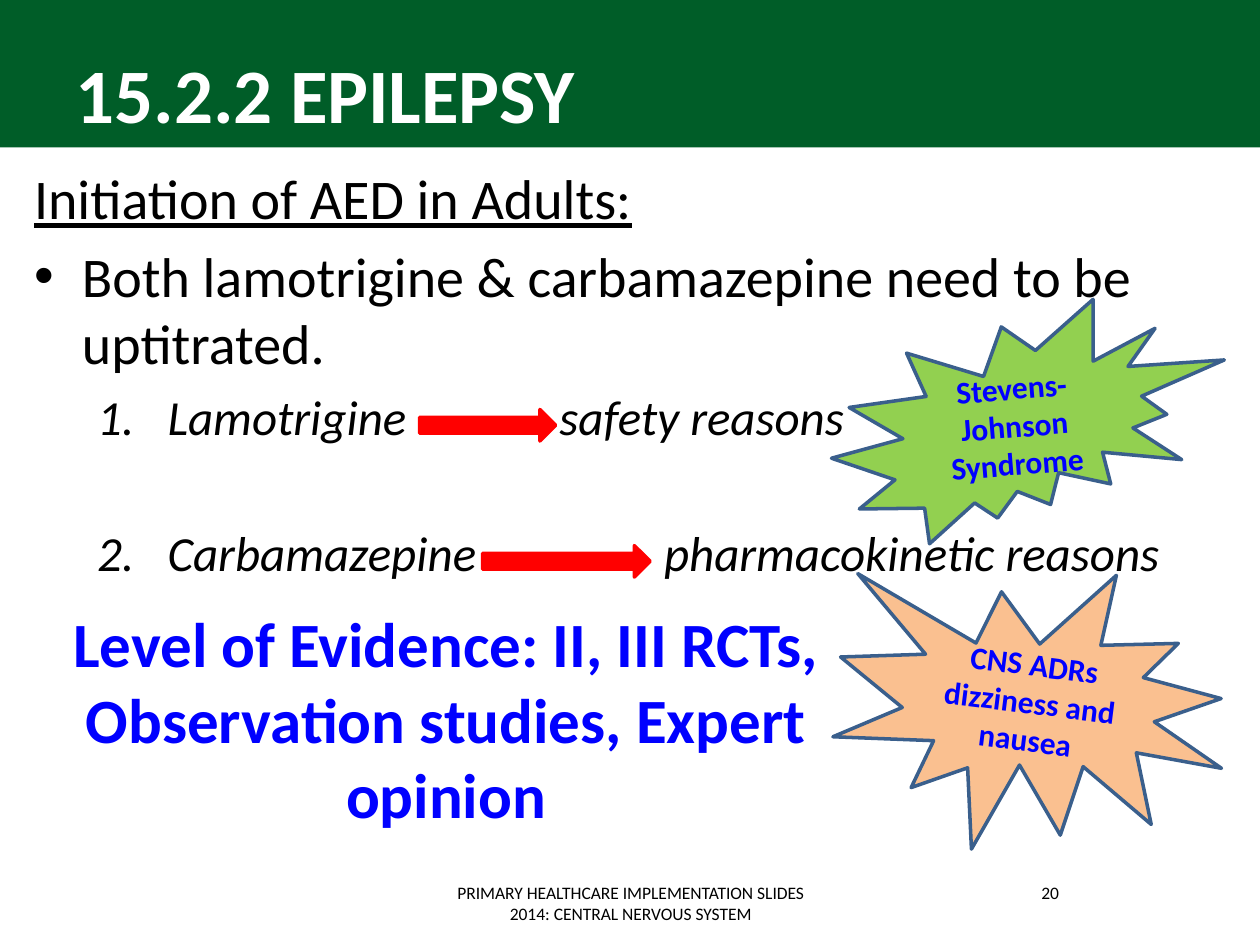
from lxml import etree
from pptx import Presentation
from pptx.dml.color import RGBColor
from pptx.enum.shapes import MSO_SHAPE
from pptx.enum.text import MSO_ANCHOR, PP_ALIGN
from pptx.oxml.ns import qn
from pptx.util import Inches, Pt

RECTANGLE = MSO_SHAPE.RECTANGLE
RIGHT_ARROW = MSO_SHAPE.RIGHT_ARROW
BURST_ROUND = MSO_SHAPE.EXPLOSION1
BURST_WIDE = MSO_SHAPE.EXPLOSION2
LEFT, CENTER = PP_ALIGN.LEFT, PP_ALIGN.CENTER
TOP, MIDDLE = MSO_ANCHOR.TOP, MSO_ANCHOR.MIDDLE

BLACK = RGBColor(0x00, 0x00, 0x00)
WHITE = RGBColor(0xFF, 0xFF, 0xFF)
GREEN = RGBColor(0x00, 0x5D, 0x28)
RED = RGBColor(0xFF, 0x00, 0x00)
BLUE = RGBColor(0x00, 0x00, 0xFF)
LIME = RGBColor(0x92, 0xD0, 0x50)
PEACH = RGBColor(0xFA, 0xC0, 0x90)
OUTLINE = RGBColor(0x3A, 0x5F, 0x8C)


def write_text(paragraph, text, size=32, color=BLACK, bold=False, italic=False,
               underline=False, align=LEFT, space_before=0, font="Calibri"):
    paragraph.alignment = align
    paragraph.space_before = Pt(space_before)
    run = paragraph.add_run()
    run.text = text
    run.font.name = font
    run.font.size = Pt(size)
    run.font.color.rgb = color
    run.font.bold = bold
    run.font.italic = italic
    run.font.underline = underline


def set_list_format(paragraph, indent, hanging, marker, tab=None, **attributes):
    """Set the indents, the bullet element and an optional tab stop."""
    properties = paragraph._p.get_or_add_pPr()
    properties.set("marL", str(Inches(indent)))
    properties.set("indent", str(-Inches(hanging)))
    etree.SubElement(properties, qn(marker), **attributes)
    if tab:
        tab_list = etree.SubElement(properties, qn("a:tabLst"))
        etree.SubElement(tab_list, qn("a:tab"), pos=str(Inches(tab)), algn="l")


class SlideBuilder:
    def __init__(self, presentation):
        self.slide = presentation.slides.add_slide(presentation.slide_layouts[1])
        self.shapes = self.slide.shapes

    def place(self, shape, left, top, width, height):
        shape.left, shape.top = Inches(left), Inches(top)
        shape.width, shape.height = Inches(width), Inches(height)

    def shape(self, kind, box, fill, line=None, rotation=0):
        shape = self.shapes.add_shape(kind, *map(Inches, box))
        shape.shadow.inherit = False
        shape.rotation = rotation
        shape.fill.solid()
        shape.fill.fore_color.rgb = fill
        if line is None:
            shape.line.fill.background()
        else:
            shape.line.color.rgb = line
            shape.line.width = Pt(2)
        return shape

    def band(self, box):
        band = self.shape(RECTANGLE, box, GREEN)
        self.shapes.title.element.addprevious(band.element)

    def title(self, box, text):
        title = self.shapes.title
        self.place(title, *box)
        title.text_frame.vertical_anchor = MIDDLE
        write_text(title.text_frame.paragraphs[0], text, size=44, color=WHITE, bold=True)

    def body(self, box, items):
        body = self.slide.placeholders[1]
        self.place(body, *box)
        frame = body.text_frame
        frame.vertical_anchor = TOP
        for index, (text, level, list_format, text_format) in enumerate(items):
            paragraph = frame.add_paragraph() if index else frame.paragraphs[0]
            paragraph.level = level
            set_list_format(paragraph, **list_format)
            write_text(paragraph, text, **text_format)

    def burst(self, kind, box, fill, rotation, text):
        burst = self.shape(kind, box, fill, OUTLINE, rotation)
        burst.text_frame.word_wrap = True
        burst.text_frame.vertical_anchor = MIDDLE
        write_text(burst.text_frame.paragraphs[0], text, size=18, color=BLUE,
                   bold=True, align=CENTER)

    def text_box(self, box, text, **text_format):
        frame = self.shapes.add_textbox(*map(Inches, box)).text_frame
        frame.word_wrap = True
        write_text(frame.paragraphs[0], text, align=CENTER, **text_format)


def main():
    presentation = Presentation()
    presentation.slide_width, presentation.slide_height = Inches(10), Inches(7.5)
    builder = SlideBuilder(presentation)

    # Heading
    builder.band((0, 0, 10, 1.17))
    builder.title((0.5, 0.3, 9, 0.87), "15.2.2 EPILEPSY")

    # Main list, with tab stops that leave room for the arrows
    outer = {"indent": 0.38, "hanging": 0.38}
    numbered = {"indent": 1.06, "hanging": 0.56, "marker": "a:buAutoNum",
                "type": "arabicPeriod"}
    reason = {"size": 28, "italic": True}
    builder.body((0.17, 1.25, 9.67, 5), [
        ("Initiation of AED in Adults:", 0,
         {**outer, "marker": "a:buNone"}, {"underline": True}),
        ("Both lamotrigine & carbamazepine need to be uptitrated.", 0,
         {**outer, "marker": "a:buChar", "char": "•"}, {"space_before": 6}),
        ("Lamotrigine\tsafety reasons", 1,
         {**numbered, "tab": 4.17}, {**reason, "space_before": 6}),
        ("Carbamazepine\tpharmacokinetic reasons", 1,
         {**numbered, "tab": 5, "startAt": "2"}, {**reason, "space_before": 44}),
    ])

    # Footer
    builder.text_box((7.17, 6.95, 2.33, 0.4), "20", size=10)
    builder.text_box((3.42, 6.95, 3.17, 0.4),
                     "PRIMARY HEALTHCARE IMPLEMENTATION SLIDES 2014: CENTRAL NERVOUS SYSTEM",
                     size=10)

    # Arrows from drug to reason
    for box in ((3.33, 3.25, 1.08, 0.25), (3.83, 4.33, 1.33, 0.25)):
        builder.shape(RIGHT_ARROW, box, RED, RED)

    # Adverse reactions
    builder.burst(BURST_WIDE, (6.58, 2.42, 3.17, 1.83), LIME, 355.4,
                  "Stevens-Johnson Syndrome")
    builder.burst(BURST_ROUND, (6.63, 4.49, 3.11, 2.3), PEACH, 7.2,
                  "CNS ADRs dizziness and nausea")

    # Evidence
    builder.text_box((0.33, 4.75, 6.42, 1.92),
                     "Level of Evidence: II, III RCTs, Observation studies, Expert opinion",
                     size=36, color=BLUE, bold=True)

    presentation.save("out.pptx")


if __name__ == "__main__":
    main()
